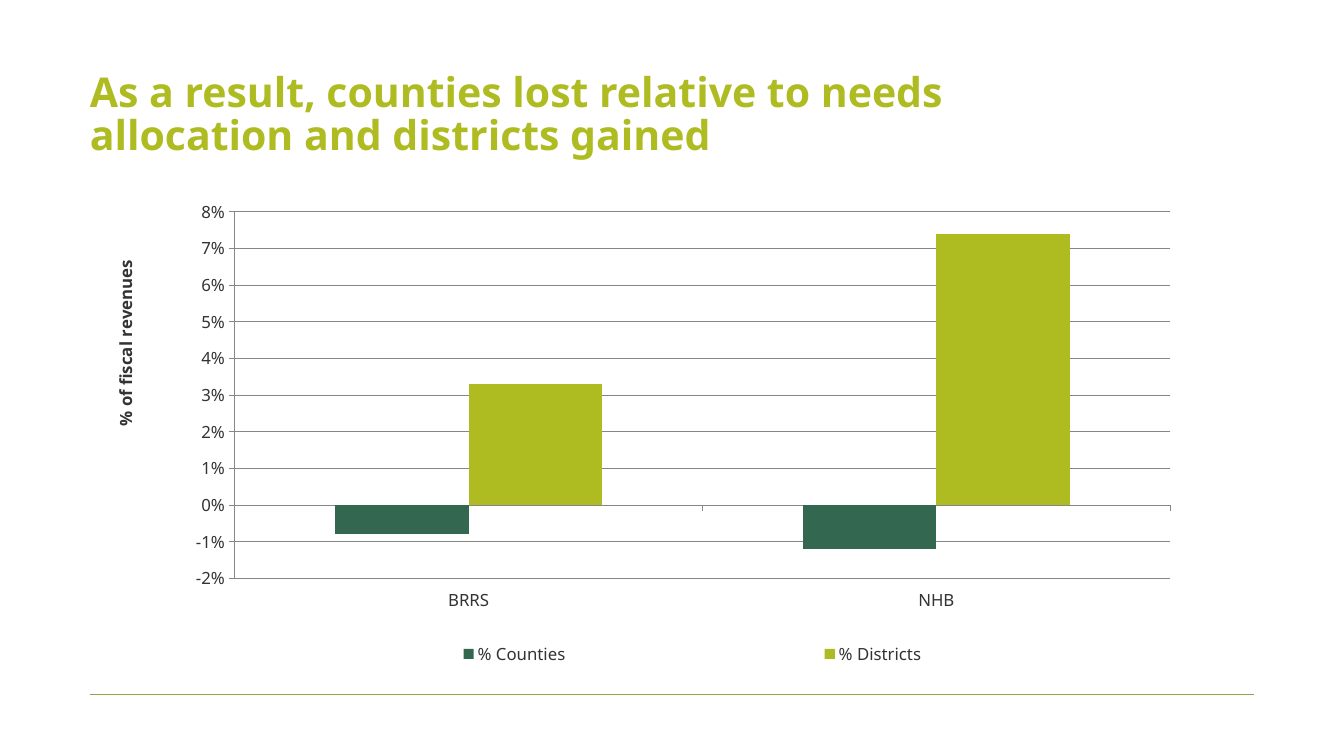
from lxml.etree import SubElement
from pptx import Presentation
from pptx.chart.data import CategoryChartData
from pptx.dml.color import RGBColor
from pptx.enum.chart import (XL_CHART_TYPE, XL_LEGEND_POSITION,
                             XL_TICK_LABEL_POSITION, XL_TICK_MARK)
from pptx.enum.text import MSO_ANCHOR
from pptx.oxml import parse_xml
from pptx.oxml.ns import nsdecls, qn
from pptx.util import Inches, Pt

TITLE = "As a result, counties lost relative to needs allocation and districts gained"
AXIS_TITLE = "% of fiscal revenues"
GROUPS = ["BRRS", "NHB"]
GREEN = RGBColor(0x33, 0x67, 0x50)
LIME = RGBColor(0xAF, 0xBC, 0x21)
OLIVE = RGBColor(0x93, 0xA4, 0x45)
DARK = RGBColor(0x33, 0x33, 0x33)
GRAY = RGBColor(0x86, 0x86, 0x86)
SERIES = [("% Counties", (-0.008, -0.012), GREEN),
          ("% Districts", (0.033, 0.074), LIME)]
FONT = "Noto Sans"


def set_font(font, size, color, bold=False):
    font.name, font.size, font.bold = FONT, Pt(size), bold
    font.color.rgb = color


def place(part, index, **layout):
    """Give a chart part a manual layout, in fractions of the chart."""
    old = part.find(qn("c:layout"))
    if old is not None:
        part.remove(old)
    tags = "".join(f'<c:{tag} val="{val}"/>' for tag, val in layout.items())
    part.insert(index, parse_xml(
        f'<c:layout {nsdecls("c")}><c:manualLayout>{tags}'
        '</c:manualLayout></c:layout>'))


def add_title(slide):
    box = slide.shapes.add_textbox(Inches(0.89), Inches(0.65), Inches(9.55), Inches(1))
    frame = box.text_frame
    frame.word_wrap = True
    frame.vertical_anchor = MSO_ANCHOR.MIDDLE
    frame.margin_left = frame.margin_right = frame.margin_top = frame.margin_bottom = 0
    para = frame.paragraphs[0]
    para.text = TITLE
    para.line_spacing = 0.88
    set_font(para.font, 29.3, LIME, True)


def add_rule(slide):
    y = Inches(6.89)
    rule = slide.shapes.add_connector(1, Inches(0.89), y, Inches(12.44), y)
    rule.line.color.rgb = OLIVE
    rule.line.width = Pt(0.75)
    SubElement(rule._element.spPr, qn("a:effectLst"))


def add_bars(slide):
    data = CategoryChartData(number_format="0%")
    data.categories = GROUPS
    for name, values, _ in SERIES:
        data.add_series(name, values)
    chart = slide.shapes.add_chart(
        XL_CHART_TYPE.COLUMN_CLUSTERED, Inches(1), Inches(1.86),
        Inches(11.76), Inches(4.85), data).chart
    chart.has_title = False
    set_font(chart.font, 12, DARK)

    plot = chart.plots[0]
    plot.gap_width, plot.overlap = 150, 0
    plot.vary_by_categories = False
    for bars, (_, _, color) in zip(plot.series, SERIES):
        bars.invert_if_negative = False
        bars.format.fill.solid()
        bars.format.fill.fore_color.rgb = color
    place(chart._chartSpace.chart.plotArea, 0, layoutTarget="inner",
          xMode="edge", yMode="edge", x=0.113, y=0.05, w=0.789, h=0.75)

    cats, vals = chart.category_axis, chart.value_axis
    cats.tick_label_position = XL_TICK_LABEL_POSITION.LOW
    cats.has_major_gridlines = False
    vals.minimum_scale, vals.maximum_scale, vals.major_unit = -0.02, 0.08, 0.01
    vals.has_major_gridlines = True
    vals.tick_labels.number_format = "0%"
    vals.tick_labels.number_format_is_linked = False
    for axis in (cats, vals):
        axis.major_tick_mark = XL_TICK_MARK.OUTSIDE
        axis.minor_tick_mark = XL_TICK_MARK.NONE
    for part in (cats, vals, vals.major_gridlines):
        part.format.line.color.rgb = GRAY
        part.format.line.width = Pt(0.75)

    title = vals.axis_title
    title.text_frame.text = AXIS_TITLE
    set_font(title.text_frame.paragraphs[0].font, 12, DARK, True)
    title.text_frame._txBody.bodyPr.set("rot", "-5400000")
    place(title._element, 1, xMode="edge", yMode="edge", x=0.007, y=0.142)

    chart.has_legend = True
    legend = chart.legend
    legend.position = XL_LEGEND_POSITION.RIGHT
    legend.include_in_layout = False
    set_font(legend.font, 12, DARK)
    place(legend._element, 1, xMode="edge", yMode="edge",
          x=0.092, y=0.919, w=0.814, h=0.07)


def main():
    deck = Presentation()
    deck.slide_width, deck.slide_height = Inches(13.33), Inches(7.5)
    slide = deck.slides.add_slide(deck.slide_layouts[6])
    add_rule(slide)
    add_title(slide)
    add_bars(slide)
    deck.save("out.pptx")


if __name__ == "__main__":
    main()
